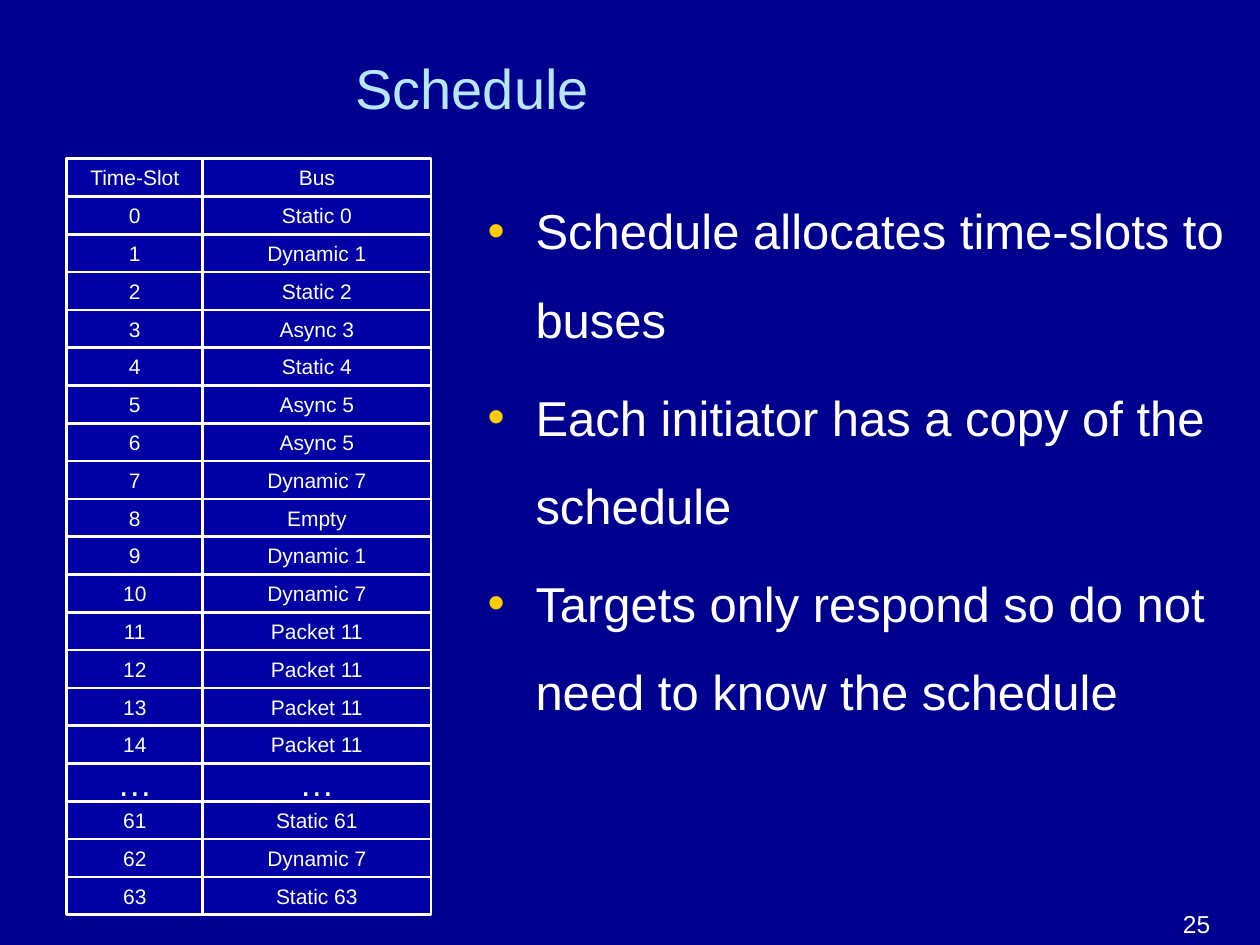
from lxml import etree
from pptx import Presentation
from pptx.dml.color import RGBColor
from pptx.enum.shapes import MSO_SHAPE
from pptx.enum.text import MSO_ANCHOR, MSO_AUTO_SIZE, PP_ALIGN
from pptx.oxml.ns import qn
from pptx.util import Inches, Pt

BACKGROUND = RGBColor(0x00, 0x00, 0x8E)
CELL_BLUE = RGBColor(0x00, 0x00, 0xA4)
TITLE_BLUE = RGBColor(0xB7, 0xE7, 0xFF)
BULLET_GOLD = RGBColor(0xFF, 0xCC, 0x00)
WHITE = RGBColor(0xFF, 0xFF, 0xFF)
RECTANGLE = MSO_SHAPE.RECTANGLE
CENTER, LEFT = PP_ALIGN.CENTER, PP_ALIGN.LEFT
MIDDLE, BOTTOM, TOP = MSO_ANCHOR.MIDDLE, MSO_ANCHOR.BOTTOM, MSO_ANCHOR.TOP
NO_AUTOFIT = MSO_AUTO_SIZE.NONE
FONT = "Arial"
ELLIPSIS = "…"

COLUMN_WIDTHS = (1.08, 1.81)
SCHEDULE = [("Time-Slot", "Bus")] + [
    (str(slot), bus) for slot, bus in enumerate([
        "Static 0", "Dynamic 1", "Static 2", "Async 3", "Static 4",
        "Async 5", "Async 5", "Dynamic 7", "Empty", "Dynamic 1",
        "Dynamic 7", "Packet 11", "Packet 11", "Packet 11", "Packet 11",
    ])
] + [
    (ELLIPSIS, ELLIPSIS),
    ("61", "Static 61"), ("62", "Dynamic 7"), ("63", "Static 63"),
]
POINTS = [
    "Schedule allocates time-slots to buses",
    "Each initiator has a copy of the schedule",
    "Targets only respond so do not need to know the schedule",
]


def place(shape, box):
    """Move a shape to a box of left, top, width and height in inches."""
    shape.left, shape.top, shape.width, shape.height = map(Inches, box)


def style_runs(p, size, color, align=LEFT):
    """Format every run of a paragraph."""
    p.alignment = align
    for r in p.runs:
        r.font.name = FONT
        r.font.size = Pt(size)
        r.font.color.rgb = color


def set_frame(tf, anchor):
    """Wrap a text frame at a fixed size with the given anchor."""
    tf.word_wrap = True
    tf.auto_size = NO_AUTOFIT
    tf.vertical_anchor = anchor


def add_title(s, box, text):
    """Fill the title placeholder."""
    place(s.shapes.title, box)
    tf = s.shapes.title.text_frame
    set_frame(tf, MIDDLE)
    tf.text = text
    style_runs(tf.paragraphs[0], 32, TITLE_BLUE)


def add_bullet(p):
    """Give a paragraph a gold bullet with a hanging indent."""
    pPr = p._p.get_or_add_pPr()
    pPr.set("marL", str(Inches(0.38)))
    pPr.set("indent", str(-Inches(0.38)))
    color = etree.SubElement(pPr, qn("a:buClr"))
    etree.SubElement(color, qn("a:srgbClr"), val=str(BULLET_GOLD))
    etree.SubElement(pPr, qn("a:buFont"), typeface=FONT)
    etree.SubElement(pPr, qn("a:buChar"), char="•")


def add_points(s, box, points):
    """Fill the body placeholder with the bulleted points."""
    body = s.placeholders[1]
    place(body, box)
    tf = body.text_frame
    set_frame(tf, TOP)
    tf.text = "\n".join(points)
    for i, p in enumerate(tf.paragraphs):
        add_bullet(p)
        p.line_spacing = 1.5
        p.space_before = Pt(5.6 if i else 0)
        style_runs(p, 28, WHITE)


def add_cell(group, box, text):
    """Add one outlined schedule cell with centred text."""
    sp = group.shapes.add_shape(RECTANGLE, *map(Inches, box))
    sp.shadow.inherit = False
    sp.fill.solid()
    sp.fill.fore_color.rgb = CELL_BLUE
    sp.line.color.rgb = WHITE
    sp.line.width = Pt(1.5)
    tf = sp.text_frame
    set_frame(tf, MIDDLE)
    tf.text = text
    style_runs(tf.paragraphs[0], 20 if text == ELLIPSIS else 12, WHITE, CENTER)


def add_schedule(s, box, rows):
    """Add the grouped grid of time-slots and buses."""
    left, top, width, height = box
    group = s.shapes.add_group_shape()
    row_height = height / len(rows)
    slot_width = COLUMN_WIDTHS[0]
    columns = ((left, slot_width), (left + slot_width, width - slot_width))
    for i, row in enumerate(rows):
        for (x, cell_width), text in zip(columns, row):
            add_cell(group, (x, top + i * row_height, cell_width, row_height), text)


def add_page_number(s, box, text):
    """Add the page number in the bottom corner."""
    tf = s.shapes.add_textbox(*map(Inches, box)).text_frame
    set_frame(tf, BOTTOM)
    tf.text = text
    style_runs(tf.paragraphs[0], 14, WHITE)


def main():
    """Build and save the slide."""
    prs = Presentation()
    prs.slide_width, prs.slide_height = Inches(10), Inches(7.5)
    s = prs.slides.add_slide(prs.slide_layouts[1])
    s.background.fill.solid()
    s.background.fill.fore_color.rgb = BACKGROUND
    add_title(s, (2.72, 0.29, 7.28, 0.8), "Schedule")
    add_points(s, (3.77, 1.31, 6.23, 5.72), POINTS)
    add_page_number(s, (9.29, 7.03, 0.71, 0.47), "25")
    add_schedule(s, (0.53, 1.26, sum(COLUMN_WIDTHS), 6), SCHEDULE)
    prs.save("out.pptx")


if __name__ == "__main__":
    main()
